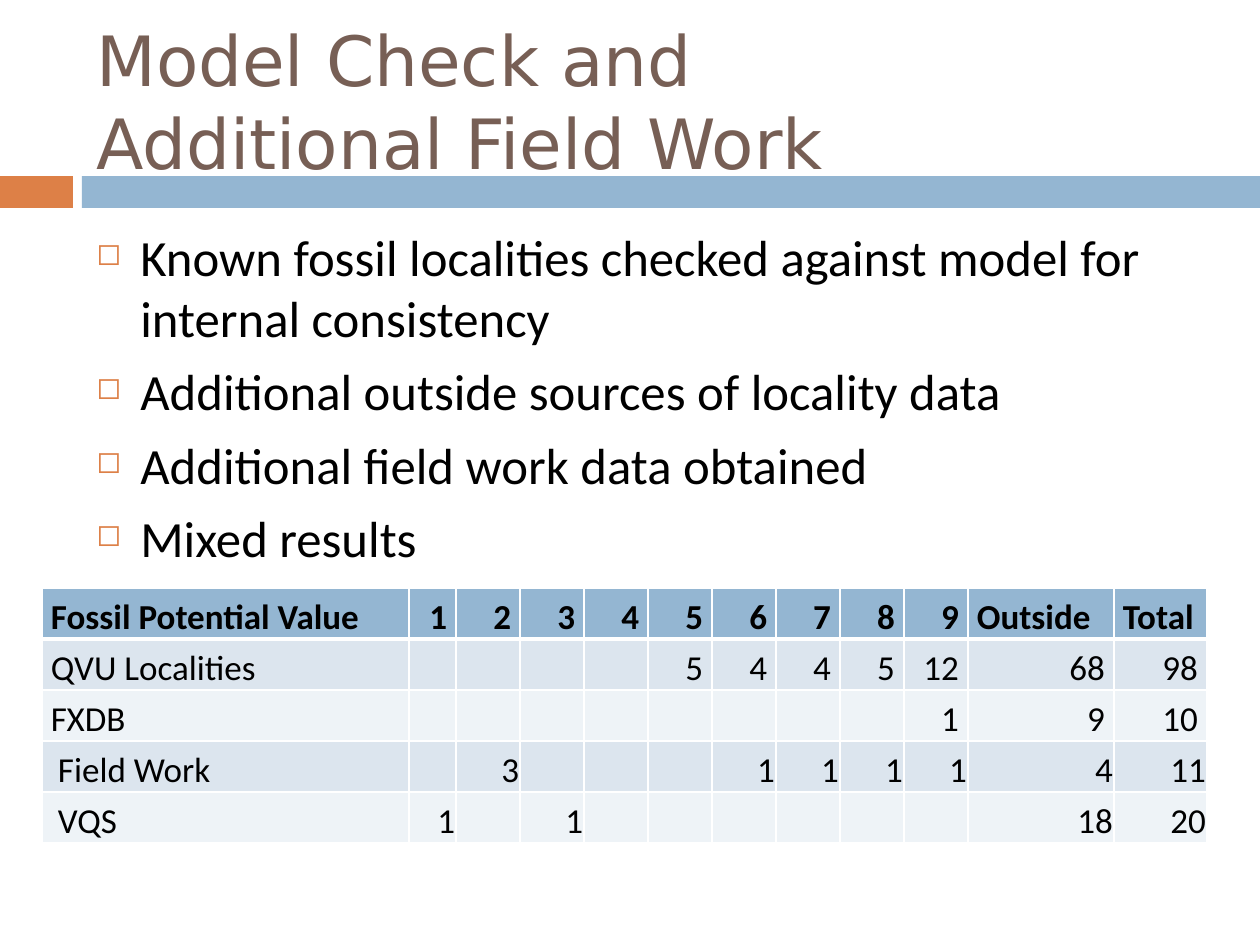
from lxml import etree
from pptx import Presentation
from pptx.dml.color import RGBColor
from pptx.enum.shapes import MSO_SHAPE
from pptx.enum.text import MSO_ANCHOR, PP_ALIGN
from pptx.oxml.ns import qn
from pptx.util import Emu, Pt

PX = 914400 / 126
RECTANGLE = MSO_SHAPE.RECTANGLE
TOP, MIDDLE, BOTTOM = MSO_ANCHOR.TOP, MSO_ANCHOR.MIDDLE, MSO_ANCHOR.BOTTOM
LEFT, RIGHT = PP_ALIGN.LEFT, PP_ALIGN.RIGHT

ORANGE, BLUE, BROWN = "DD8047", "94B6D2", "775F55"
BLACK, WHITE = "000000", "FFFFFF"
BANDS = ["DCE5EE", "EEF3F7"]

TITLE = "Model Check and \vAdditional Field Work"
BULLETS = [
    "Known fossil localities checked against model for internal consistency",
    "Additional outside sources of locality data",
    "Additional field work data obtained",
    "Mixed results",
]
HEADER = ["Fossil Potential Value", *"123456789", "Outside", "Total"]
COUNTS = [
    ("QVU Localities", {5: 5, 6: 4, 7: 4, 8: 5, 9: 12, 10: 68, 11: 98}),
    ("FXDB", {9: 1, 10: 9, 11: 10}),
    ("Field Work", {2: 3, 6: 1, 7: 1, 8: 1, 9: 1, 10: 4, 11: 11}),
    ("VQS", {1: 1, 3: 1, 10: 18, 11: 20}),
]
COLUMN_WIDTHS = [367, 47] + [64] * 8 + [146, 93]
ROW_HEIGHT = 51
LOOSE_ROWS = 3  # header and first two data rows have wide side margins


def px(length):
    return Emu(round(length * PX))


def color(hex_value):
    return RGBColor.from_string(hex_value)


def apply(target, values):
    for name, value in values.items():
        setattr(target, name, value)


def add_bar(slide, left, width, fill):
    bar = slide.shapes.add_shape(RECTANGLE, px(left), px(176), px(width), px(32))
    bar.shadow.inherit = False
    bar.fill.solid()
    bar.fill.fore_color.rgb = color(fill)
    bar.line.fill.background()


def add_run(paragraph, text, size, font="Calibri", fill=BLACK, bold=False):
    paragraph.text = text
    for run in paragraph.runs:
        apply(run.font, {"name": font, "size": Pt(size), "bold": bold})
        run.font.color.rgb = color(fill)


def add_text_frame(slide, left, top, width, height, anchor):
    box = slide.shapes.add_textbox(px(left), px(top), px(width), px(height))
    apply(box.text_frame, {"word_wrap": True, "vertical_anchor": anchor})
    return box.text_frame


def add_square_bullet(paragraph):
    properties = paragraph._p.get_or_add_pPr()
    indents = {"marL": px(44), "indent": -px(44)}
    for name, value in indents.items():
        properties.set(name, str(value))
    bullet_color = etree.SubElement(properties, qn("a:buClr"))
    etree.SubElement(bullet_color, qn("a:srgbClr"), val=ORANGE)
    etree.SubElement(properties, qn("a:buSzPct"), val="60000")
    etree.SubElement(properties, qn("a:buChar"), char="◻")


def add_bullets(slide):
    frame = add_text_frame(slide, 84, 220, 1124, 620, TOP)
    for index, text in enumerate(BULLETS):
        paragraph = frame.add_paragraph() if index else frame.paragraphs[0]
        paragraph.space_before = Pt(7)
        add_square_bullet(paragraph)
        add_run(paragraph, text, 29)


def set_borders(cell, widths):
    properties = cell._tc.get_or_add_tcPr()
    for side, width in zip("LRTB", widths):
        line = etree.SubElement(properties, qn(f"a:ln{side}"), w=str(Pt(width)))
        fill = etree.SubElement(line, qn("a:solidFill"))
        etree.SubElement(fill, qn("a:srgbClr"), val=WHITE)


def format_cell(cell, row, column, text):
    loose = row < LOOSE_ROWS
    side = 9 if loose else 1
    apply(cell, {
        "vertical_anchor": BOTTOM,
        "margin_left": px(16 if column == 0 and not loose else side),
        "margin_right": px(side),
        "margin_top": px(0 if loose else 1),
        "margin_bottom": px(0),
    })
    set_borders(cell, [1, 1, 3 if row == 1 else 1, 3 if row == 0 else 1])
    cell.fill.solid()
    cell.fill.fore_color.rgb = color(BANDS[(row - 1) % 2] if row else BLUE)
    if text:
        paragraph = cell.text_frame.paragraphs[0]
        is_label = column == 0 or (row == 0 and column > 9)
        apply(paragraph, {"alignment": LEFT if is_label else RIGHT,
                          "line_spacing": 1.15 if loose else 1.0})
        add_run(paragraph, text, 20, bold=row == 0)


def add_counts_table(slide):
    columns = range(1, len(HEADER))
    rows = [HEADER] + [[label] + [str(counts.get(column, "")) for column in columns]
                       for label, counts in COUNTS]
    table = slide.shapes.add_table(
        len(rows), len(HEADER), px(42), px(588),
        px(sum(COLUMN_WIDTHS)), px(ROW_HEIGHT * len(rows))).table
    for column, width in zip(table.columns, COLUMN_WIDTHS):
        column.width = px(width)
    for row, texts in enumerate(rows):
        table.rows[row].height = px(ROW_HEIGHT)
        for column, text in enumerate(texts):
            format_cell(table.cell(row, column), row, column, text)


def main():
    presentation = Presentation()
    apply(presentation, {"slide_width": px(1260), "slide_height": px(945)})
    slide = presentation.slides.add_slide(presentation.slide_layouts[6])
    add_bar(slide, 0, 73, ORANGE)
    add_bar(slide, 82, 1178, BLUE)
    title = add_text_frame(slide, 84, 32, 1124, 136, MIDDLE)
    add_run(title.paragraphs[0], TITLE, 39.6, "DejaVu Sans", BROWN)
    add_bullets(slide)
    add_counts_table(slide)
    presentation.save("out.pptx")


if __name__ == "__main__":
    main()
